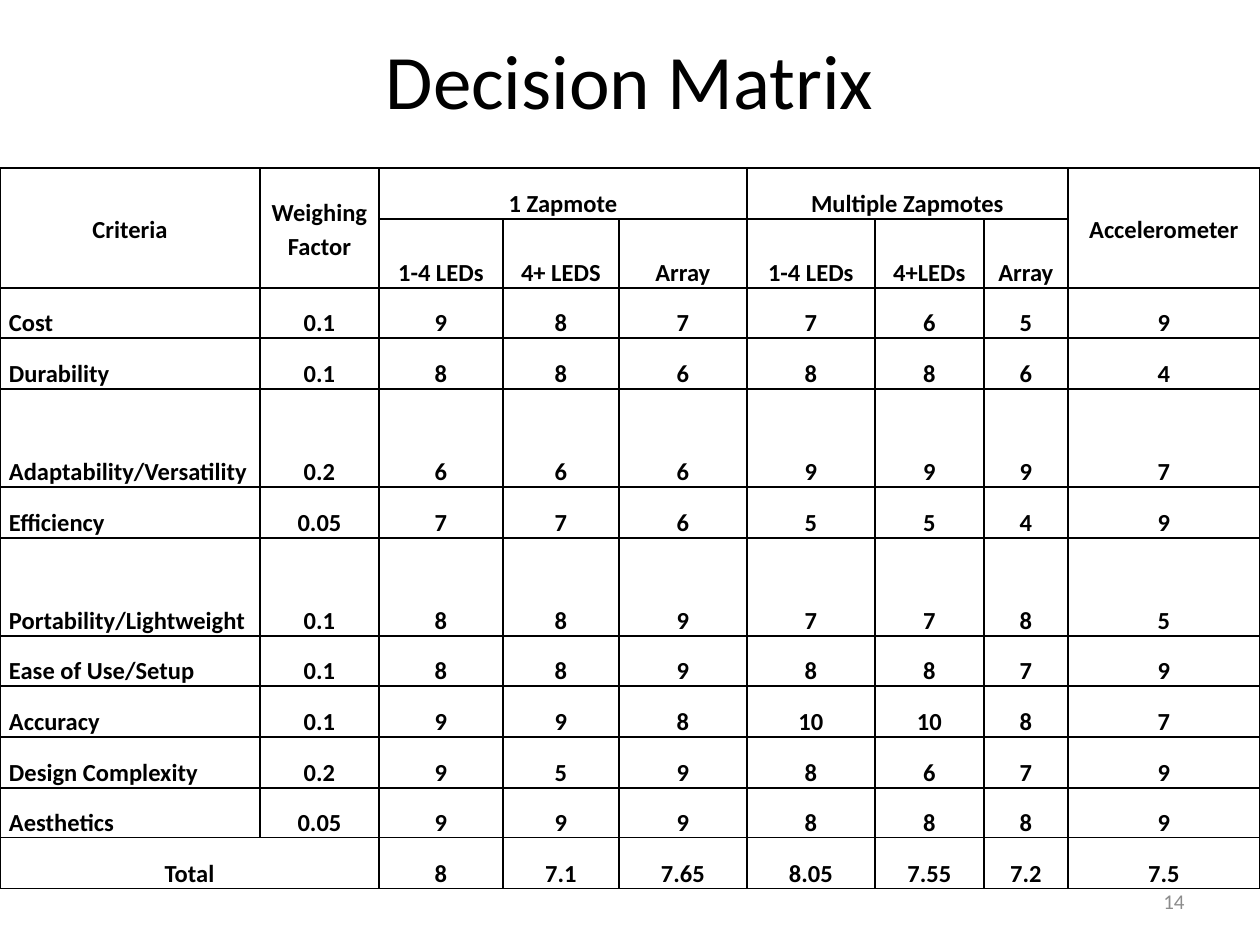
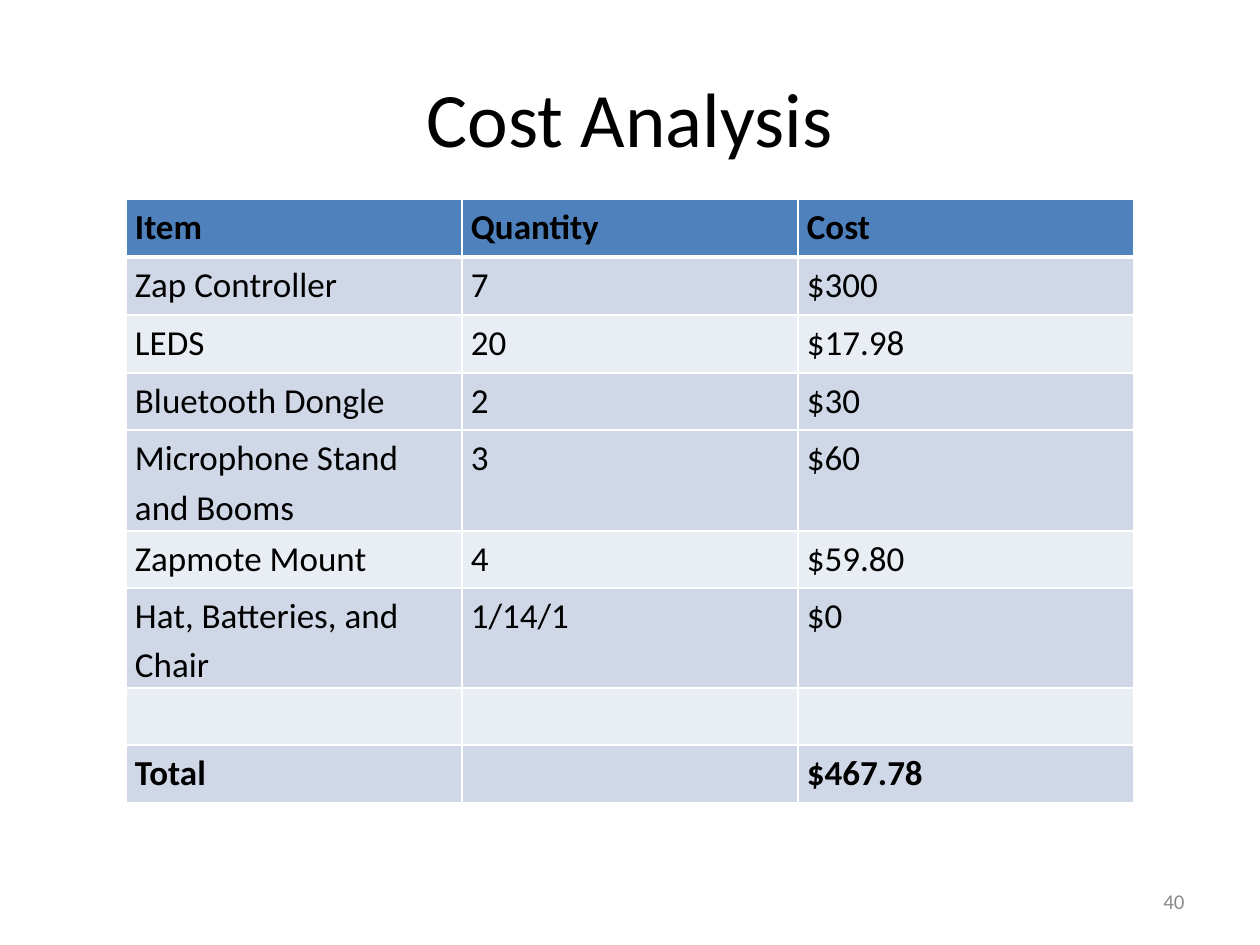
import pptx
import pptx.util
import pptx.dml.color
import pptx.enum.text
import pptx.oxml
import pptx.oxml.ns
from itertools import pairwise

PX = 914400 // 126
FONT = "Calibri"
COLORS = {
    "text": "000000", "number": "8C8C8C", "grid": "000000", "rule": "FFFFFF",
    "header": "4F81BD", "dark": "D0D8E8", "light": "E9EDF4",
}
NO_STYLE = "{2D5ABB26-0587-4C30-8999-92F81FD0307C}"
ALIGN = pptx.enum.text.PP_ALIGN
ANCHOR = pptx.enum.text.MSO_ANCHOR

MATRIX = [
    ["Criteria", "Weighing Factor", "1 Zapmote", "", "", "Multiple Zapmotes", "", "", "Accelerometer"],
    ["", "", "1-4 LEDs", "4+ LEDS", "Array", "1-4 LEDs", "4+LEDs", "Array", ""],
    ["Cost", "0.1", "9", "8", "7", "7", "6", "5", "9"],
    ["Durability", "0.1", "8", "8", "6", "8", "8", "6", "4"],
    ["Adaptability/Versatility", "0.2", "6", "6", "6", "9", "9", "9", "7"],
    ["Efficiency", "0.05", "7", "7", "6", "5", "5", "4", "9"],
    ["Portability/Lightweight", "0.1", "8", "8", "9", "7", "7", "8", "5"],
    ["Ease of Use/Setup", "0.1", "8", "8", "9", "8", "8", "7", "9"],
    ["Accuracy", "0.1", "9", "9", "8", "10", "10", "8", "7"],
    ["Design Complexity", "0.2", "9", "5", "9", "8", "6", "7", "9"],
    ["Aesthetics", "0.05", "9", "9", "9", "8", "8", "8", "9"],
    ["Total", "", "8", "7.1", "7.65", "8.05", "7.55", "7.2", "7.5"],
]
MATRIX_X = [0, 260, 379, 503, 619, 747, 875, 984, 1068, 1260]
MATRIX_Y = [168, 219, 288, 338, 389, 487, 538, 636, 686, 737, 788, 838, 889]
MERGES = [(0, 0, 1, 0), (0, 1, 1, 1), (0, 2, 0, 4), (0, 5, 0, 7), (0, 8, 1, 8), (11, 0, 11, 1)]

COSTS = [
    ["Item", "Quantity", "Cost"],
    ["Zap Controller", "7", "$300"],
    ["LEDS", "20", "$17.98"],
    ["Bluetooth Dongle", "2", "$30"],
    ["Microphone Stand and Booms", "3", "$60"],
    ["Zapmote Mount", "4", "$59.80"],
    ["Hat, Batteries, and Chair", "1/14/1", "$0"],
    ["", "", ""],
    ["Total", "", "$467.78"],
]
COSTS_X = [126, 462, 798, 1134]
COSTS_Y = [199, 257, 315, 373, 430, 531, 588, 688, 745, 803]
COSTS_FILLS = ["header", "dark", "light", "dark", "dark", "light", "dark", "light", "dark"]


def rgb(name):
    return pptx.dml.color.RGBColor.from_string(COLORS[name])


def set_all(obj, values):
    for name, value in values.items():
        setattr(obj, name, value)


def write(tf, text, size, color="text", bold=False, **layout):
    p = tf.paragraphs[0]
    set_all(p, layout)
    r = p.add_run()
    r.text = text
    set_all(r.font, {"name": FONT, "size": pptx.util.Pt(size), "bold": bold})
    r.font.color.rgb = rgb(color)


def add_text(slide, box, text, size, color, alignment):
    tf = slide.shapes.add_textbox(*(v * PX for v in box)).text_frame
    set_all(tf, {"word_wrap": True, "vertical_anchor": ANCHOR.MIDDLE})
    write(tf, text, size, color, alignment=alignment)


def add_slide(prs, title, top, number):
    slide = prs.slides.add_slide(prs.slide_layouts[6])
    add_text(slide, (63, top, 1134, 158), title, 44, "text", ALIGN.CENTER)
    add_text(slide, (903, 876, 294, 50), number, 12, "number", ALIGN.RIGHT)
    return slide


def set_borders(cell, color, widths):
    tcPr = cell._tc.get_or_add_tcPr()
    for side, width in zip("LRTB", widths):
        tcPr.append(pptx.oxml.parse_xml(
            f'<a:ln{side} {pptx.oxml.ns.nsdecls("a")} w="{pptx.util.Pt(width)}">'
            f'<a:solidFill><a:srgbClr val="{COLORS[color]}"/></a:solidFill></a:ln{side}>'))


def add_table(slide, rows, xs, ys):
    box = (xs[0], ys[0], xs[-1] - xs[0], ys[-1] - ys[0])
    table = slide.shapes.add_table(len(rows), len(rows[0]), *(v * PX for v in box)).table
    set_all(table, {"first_row": False, "horz_banding": False})
    table._tbl.tblPr.find(pptx.oxml.ns.qn("a:tableStyleId")).text = NO_STYLE
    for col, (a, b) in zip(table.columns, pairwise(xs)):
        col.width = (b - a) * PX
    for row, (a, b) in zip(table.rows, pairwise(ys)):
        row.height = (b - a) * PX
    return table


def each_cell(table, rows):
    for i, row in enumerate(rows):
        for j, text in enumerate(row):
            yield i, j, table.cell(i, j), text


def build_matrix(prs):
    slide = add_slide(prs, "Decision Matrix", 0, "14")
    table = add_table(slide, MATRIX, MATRIX_X, MATRIX_Y)
    for top, left, bottom, right in MERGES:
        table.cell(top, left).merge(table.cell(bottom, right))
    for i, j, cell, text in each_cell(table, MATRIX):
        set_borders(cell, "grid", (1, 1, 1, 1))
        cell.fill.background()
        tall = cell.is_merge_origin and cell.span_height > 1
        set_all(cell, {"margin_left": 9 * PX, "margin_right": 9 * PX,
                       "margin_top": 0, "margin_bottom": 0,
                       "vertical_anchor": ANCHOR.MIDDLE if tall else ANCHOR.BOTTOM})
        if text:
            is_label = j == 0 and 2 <= i < len(MATRIX) - 1
            write(cell.text_frame, text, 14, bold=True, line_spacing=1.15,
                  alignment=ALIGN.LEFT if is_label else ALIGN.CENTER)


def build_costs(prs):
    slide = add_slide(prs, "Cost Analysis", 38, "40")
    table = add_table(slide, COSTS, COSTS_X, COSTS_Y)
    for i, j, cell, text in each_cell(table, COSTS):
        set_borders(cell, "rule", (1, 1, 3 if i == 1 else 1, 3 if i == 0 else 1))
        cell.fill.solid()
        cell.fill.fore_color.rgb = rgb(COSTS_FILLS[i])
        set_all(cell, {"margin_left": 9 * PX, "margin_right": 9 * PX,
                       "margin_top": PX, "margin_bottom": 0})
        if text:
            write(cell.text_frame, text, 20, bold=i in (0, len(COSTS) - 1),
                  line_spacing=1.15, space_after=pptx.util.Pt(10))


def main():
    prs = pptx.Presentation()
    set_all(prs, {"slide_width": 1260 * PX, "slide_height": 945 * PX})
    build_matrix(prs)
    build_costs(prs)
    prs.save("out.pptx")


if __name__ == "__main__":
    main()
